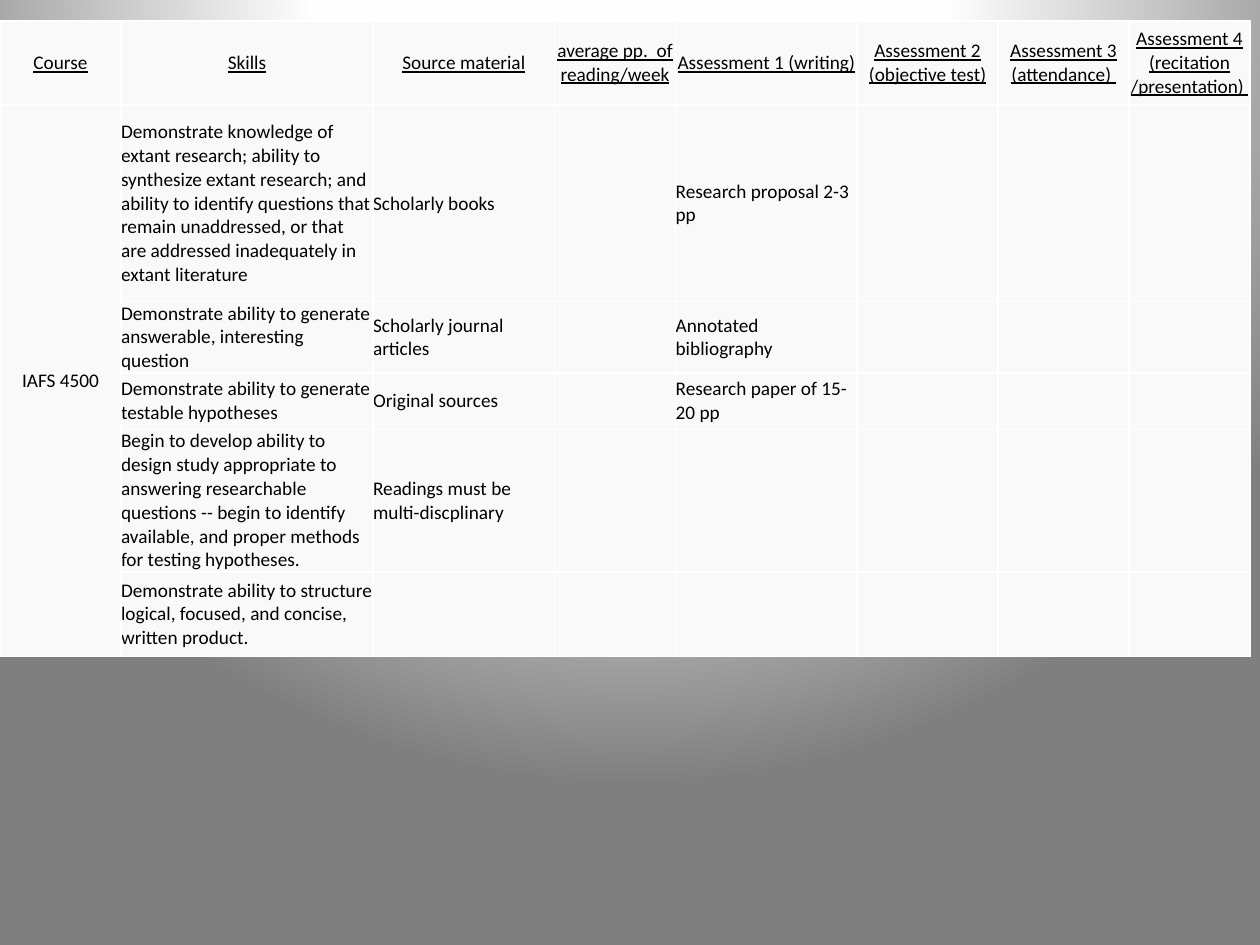
from pptx import Presentation
from pptx.dml.color import RGBColor
from pptx.enum.text import MSO_ANCHOR, PP_ALIGN
from pptx.oxml import parse_xml
from pptx.oxml.ns import nsdecls
from pptx.util import Cm, Pt

HEADERS = [
    "Course", "Skills", "Source material", "average pp.  of reading/week",
    "Assessment 1 (writing)", "Assessment 2 (objective test)",
    "Assessment 3 (attendance) ", "Assessment 4 (recitation /presentation) ",
]
COURSE = "IAFS 4500"
# Skill, source material, writing assessment
REQUIREMENTS = [
    ("Demonstrate knowledge of extant research; ability to synthesize extant "
     "research; and ability to identify questions that remain unaddressed, or "
     "that are addressed inadequately in extant literature",
     "Scholarly books", "Research proposal 2-3 pp"),
    ("Demonstrate ability to generate answerable, interesting question",
     "Scholarly journal articles", "Annotated bibliography"),
    ("Demonstrate ability to generate testable hypotheses",
     "Original sources", "Research paper of 15-20 pp"),
    ("Begin to develop ability to design study appropriate to answering "
     "researchable questions -- begin to identify available, and proper "
     "methods for testing hypotheses.",
     "Readings must be multi-discplinary", ""),
    ("Demonstrate ability to structure logical, focused, and concise, "
     "written product.", "", ""),
]
COL_WIDTHS = [2.44, 5.08, 3.66, 2.44, 3.66, 2.84, 2.64, 2.44]
ROW_HEIGHTS = [1.7, 3.96, 1.43, 1.14, 2.85, 1.7]
TABLE_TOP = 0.42
CELL_FILL, BORDER, TEXT = "F9F9F9", "FFFFFF", "000000"
GRADIENT = [(0, "FFFFFF"), (40, "FEFEFE"), (100, "7F7F7F")]
CELL_FORMAT = {
    "vertical_anchor": MSO_ANCHOR.MIDDLE,
    "margin_left": 0, "margin_right": 0, "margin_top": 0, "margin_bottom": 0,
}
FONT_FORMAT = {"name": "Calibri", "size": Pt(11)}


def rgb(value):
    return RGBColor.from_string(value)


def set_background(s):
    """Radial gradient centred above the top edge of the slide."""
    stops = "".join(
        f'<a:gs pos="{pos * 1000}"><a:srgbClr val="{color}"/></a:gs>'
        for pos, color in GRADIENT)
    s.element.cSld.insert(0, parse_xml(
        f'<p:bg {nsdecls("p", "a")}><p:bgPr><a:gradFill rotWithShape="1">'
        f'<a:gsLst>{stops}</a:gsLst><a:path path="circle">'
        '<a:fillToRect l="50000" t="-80000" r="50000" b="180000"/></a:path>'
        '</a:gradFill><a:effectLst/></p:bgPr></p:bg>'))


def set_borders(cell):
    tc_pr = cell._tc.get_or_add_tcPr()
    for i, side in enumerate(("lnL", "lnR", "lnT", "lnB")):
        tc_pr.insert(i, parse_xml(
            f'<a:{side} {nsdecls("a")} w="{Pt(1)}"><a:solidFill>'
            f'<a:srgbClr val="{BORDER}"/></a:solidFill></a:{side}>'))


def write(cell, text, centered, underline):
    p = cell.text_frame.paragraphs[0]
    p.alignment = PP_ALIGN.CENTER if centered else PP_ALIGN.LEFT
    r = p.add_run()
    r.text = text
    for name, value in FONT_FORMAT.items():
        setattr(r.font, name, value)
    r.font.underline = underline
    r.font.color.rgb = rgb(TEXT)


def main():
    prs = Presentation()
    prs.slide_width, prs.slide_height = Cm(25.4), Cm(19.05)
    s = prs.slides.add_slide(prs.slide_layouts[6])
    set_background(s)

    rows = [HEADERS]
    for i, (skill, source, writing) in enumerate(REQUIREMENTS):
        course = COURSE if i == 0 else ""
        rows.append([course, skill, source, "", writing, "", "", ""])

    table = s.shapes.add_table(
        len(rows), len(HEADERS), 0, Cm(TABLE_TOP),
        Cm(sum(COL_WIDTHS)), Cm(sum(ROW_HEIGHTS))).table
    for column, width in zip(table.columns, COL_WIDTHS):
        column.width = Cm(width)
    for row, height in zip(table.rows, ROW_HEIGHTS):
        row.height = Cm(height)

    for i, texts in enumerate(rows):
        for j, text in enumerate(texts):
            cell = table.cell(i, j)
            for name, value in CELL_FORMAT.items():
                setattr(cell, name, value)
            cell.fill.solid()
            cell.fill.fore_color.rgb = rgb(CELL_FILL)
            set_borders(cell)
            if text:
                write(cell, text, centered=i == 0 or j == 0, underline=i == 0)
    table.cell(1, 0).merge(table.cell(len(rows) - 1, 0))

    prs.save("out.pptx")


if __name__ == "__main__":
    main()
